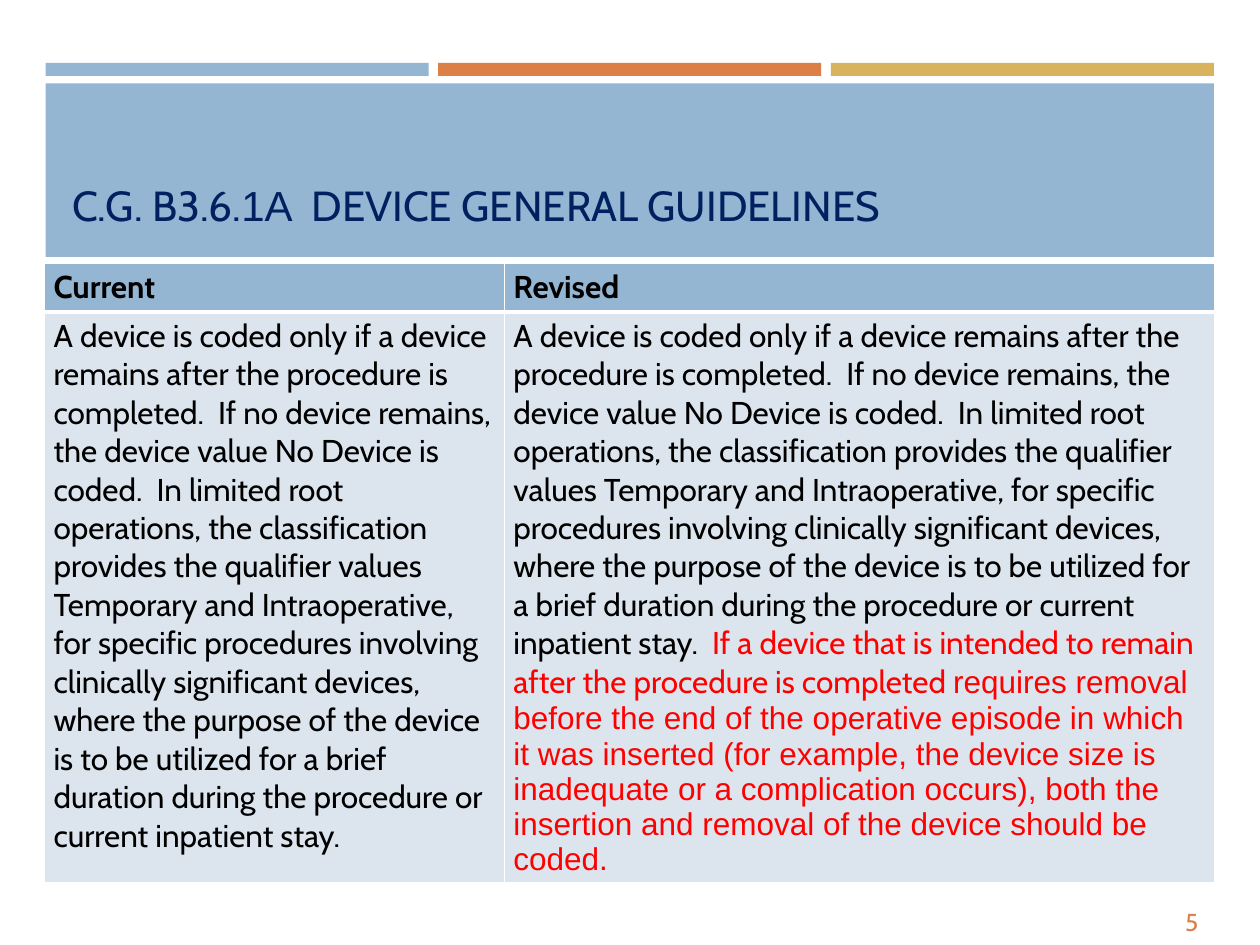
import pptx
import pptx.util
import pptx.dml.color
import pptx.enum.shapes
import pptx.enum.text
import pptx.oxml
import pptx.oxml.ns
from pptx.util import Cm, Pt

BLUE, ORANGE, GOLD = "94B6D2", "DD8047", "D8B25C"
NAVY, PALE, BLACK, RED, WHITE = "002060", "DCE5EE", "000000", "FF0000", "FFFFFF"

GUIDELINE = (
    "A device is coded only if a device remains after the procedure is completed.  "
    "If no device remains, the device value No Device is coded.  In limited root "
    "operations, the classification provides the qualifier values Temporary and "
    "Intraoperative, for specific procedures involving clinically significant devices, "
    "where the purpose of the device is to be utilized for a brief duration during the "
    "procedure or current inpatient stay."
)
ADDED_START = "If a device that is intended to remain after the procedure is completed "
ADDED_END = (
    "requires removal before the end of the operative episode in which it was inserted "
    "(for example, the device size is inadequate or a complication occurs), both the "
    "insertion and removal of the device should be coded."
)


def color(value):
    return pptx.dml.color.RGBColor.from_string(value)


def add_span(para, text, size, value, font="Cabin", bold=False):
    span = para.add_run()
    span.text = text
    span.font.name = font
    span.font.size = Pt(size)
    span.font.bold = bold
    span.font.color.rgb = color(value)


def add_bar(page, left, top, width, height, value):
    bar = page.shapes.add_shape(
        pptx.enum.shapes.MSO_SHAPE.RECTANGLE, Cm(left), Cm(top), Cm(width), Cm(height))
    bar.shadow.inherit = False
    bar.fill.solid()
    bar.fill.fore_color.rgb = color(value)
    bar.line.fill.background()
    return bar


def add_header(page, left, top, width):
    """Three accent bars above a band that holds the title."""
    gap = 0.19
    bar_width = (width - 2 * gap) / 3
    for index, value in enumerate((BLUE, ORANGE, GOLD)):
        add_bar(page, left + index * (bar_width + gap), top, bar_width, 0.26, value)
    band = add_bar(page, left, top + 0.41, width, 3.5, BLUE)

    title = page.shapes.title
    band.element.addnext(title.element)
    title.left, title.top = Cm(left + 0.28), Cm(top + 0.76)
    title.width, title.height = Cm(width - 0.56), Cm(2.74)
    frame = title.text_frame
    frame.word_wrap = True
    frame.vertical_anchor = pptx.enum.text.MSO_ANCHOR.BOTTOM
    para = frame.paragraphs[0]
    para.alignment = pptx.enum.text.PP_ALIGN.LEFT
    add_span(para, "C.G. B3.6.", 24, NAVY)
    add_span(para, "1A", 24, NAVY, "Arial")
    add_span(para, "  DEVICE GENERAL GUIDELINES", 24, NAVY)


def set_borders(cell, widths):
    """Draw white borders; widths are points for left, right, top and bottom."""
    properties = cell._tc.get_or_add_tcPr()
    for index, (side, width) in enumerate(zip("LRTB", widths)):
        properties.insert(index, pptx.oxml.parse_xml(
            f'<a:ln{side} {pptx.oxml.ns.nsdecls("a")} w="{Pt(width)}"><a:solidFill>'
            f'<a:srgbClr val="{WHITE}"/></a:solidFill></a:ln{side}>'))


def fill_cell(cell, spans, fill, bold, widths):
    cell.margin_left = cell.margin_right = Cm(0.18)
    cell.margin_top = cell.margin_bottom = Cm(0.1)
    cell.fill.solid()
    cell.fill.fore_color.rgb = color(fill)
    set_borders(cell, widths)
    for text, value, font in spans:
        add_span(cell.text_frame.paragraphs[0], text, 18, value, font, bold)


def add_comparison(page, left, top, column_widths, row_heights):
    """Table of the current and the revised guideline."""
    table = page.shapes.add_table(
        2, 2, Cm(left), Cm(top), Cm(sum(column_widths)), Cm(sum(row_heights))).table
    for column, width in zip(table.columns, column_widths):
        column.width = Cm(width)
    for row, height in zip(table.rows, row_heights):
        row.height = Cm(height)
    columns = {
        "Current": [(GUIDELINE, BLACK, "Cabin")],
        "Revised": [(GUIDELINE + "  ", BLACK, "Cabin"),
                    (ADDED_START, RED, "Cabin"),
                    (ADDED_END, RED, "Arial")],
    }
    for index, (heading, spans) in enumerate(columns.items()):
        fill_cell(table.cell(0, index), [(heading, BLACK, "Cabin")], BLUE, True, (1, 1, 1, 3))
        fill_cell(table.cell(1, index), spans, PALE, False, (1, 1, 3, 1))


def add_page_number(page, left, top, width, height):
    box = page.shapes.add_textbox(Cm(left), Cm(top), Cm(width), Cm(height))
    frame = box.text_frame
    frame.word_wrap = True
    frame.vertical_anchor = pptx.enum.text.MSO_ANCHOR.MIDDLE
    para = frame.paragraphs[0]
    para.alignment = pptx.enum.text.PP_ALIGN.RIGHT
    add_span(para, "5", 14, ORANGE)


def main():
    deck = pptx.Presentation()
    deck.slide_width, deck.slide_height = Cm(25.4), Cm(19.05)
    page = deck.slides.add_slide(deck.slide_layouts[5])
    add_header(page, 0.92, 1.27, 23.55)
    add_comparison(page, 0.9, 5.31, (9.27, 14.31), (0.94, 11.48))
    add_page_number(page, 23.62, 18.21, 0.79, 0.76)
    deck.save("out.pptx")


if __name__ == "__main__":
    main()
